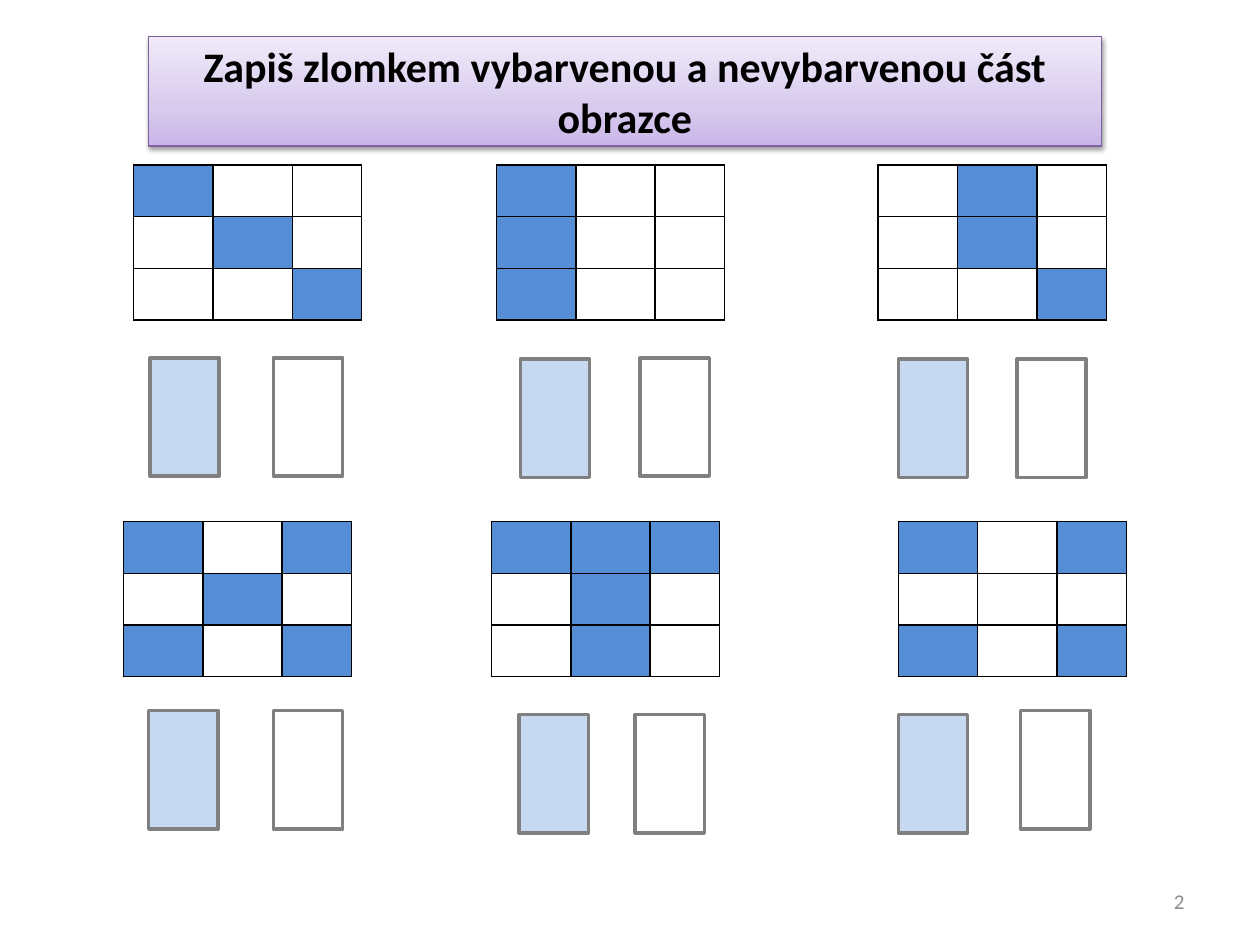
import pptx
import pptx.util
import pptx.dml.color
import pptx.oxml
import pptx.oxml.ns
from pptx.enum.shapes import MSO_SHAPE
from pptx.enum.text import MSO_ANCHOR, MSO_AUTO_SIZE, PP_ALIGN

Inches, Pt = pptx.util.Inches, pptx.util.Pt

# Content: "#" is a coloured square, "." an empty one
HEADING = "Zapiš zlomkem vybarvenou a nevybarvenou část obrazce"
PAGE_NUMBER = "2"
FRACTION_TASKS = [
    # pattern, grid position, coloured answer position, empty answer position
    (("#..", ".#.", "..#"), (1.06, 1.31), (1.19, 2.84), (2.17, 2.84)),
    (("#..", "#..", "#.."), (3.94, 1.31), (4.13, 2.85), (5.08, 2.84)),
    ((".#.", ".#.", "..#"), (6.97, 1.31), (7.13, 2.85), (8.07, 2.85)),
    (("#.#", ".#.", "#.#"), (0.98, 4.14), (1.18, 5.64), (2.17, 5.64)),
    (("###", ".#.", ".#."), (3.9, 4.14), (4.12, 5.67), (5.04, 5.67)),
    (("#.#", "...", "#.#"), (7.13, 4.14), (7.13, 5.67), (8.1, 5.64)),
]

COLUMN_WIDTHS = (0.63, 0.63, 0.55)
ROW_HEIGHT = 0.41
ANSWER_SIZE = (0.55, 0.94)
HEADING_STOPS = [(0, "C9B5E8"), (35, "D8CBEE"), (100, "F0EAF9")]
COLOURED, ANSWER_TINT, ANSWER_EDGE = "558ED5", "C6D9F1", "808080"


def rgb(colour):
    return pptx.dml.color.RGBColor.from_string(colour)


def xml(markup):
    """Parse an element whose opening tag ends in a NS marker."""
    return pptx.oxml.parse_xml(markup.replace("NS", pptx.oxml.ns.nsdecls("a"), 1))


def paint(target, colour):
    if colour:
        target.fill.solid()
        target.fill.fore_color.rgb = rgb(colour)
    else:
        target.fill.background()


def write(shape, text, size, colour, align, bold=False):
    frame = shape.text_frame
    frame.text = text
    frame.word_wrap = True
    frame.auto_size = MSO_AUTO_SIZE.NONE
    frame.vertical_anchor = MSO_ANCHOR.MIDDLE
    paragraph = frame.paragraphs[0]
    paragraph.alignment = align
    font = paragraph.runs[0].font
    font.name, font.size, font.bold = "Calibri", Pt(size), bold
    font.color.rgb = rgb(colour)


def add_heading(slide):
    heading = slide.shapes.title
    heading.left, heading.top = Inches(1.18), Inches(0.29)
    heading.width, heading.height = Inches(7.56), Inches(0.87)
    stops = "".join(f'<a:gs pos="{pos * 1000}"><a:srgbClr val="{colour}"/></a:gs>'
                    for pos, colour in HEADING_STOPS)
    properties = heading.element.spPr
    properties.append(xml('<a:prstGeom NS prst="roundRect"><a:avLst/></a:prstGeom>'))
    properties.append(xml(f'<a:gradFill NS rotWithShape="1"><a:gsLst>{stops}</a:gsLst>'
                          '<a:lin ang="16200000" scaled="1"/></a:gradFill>'))
    heading.line.color.rgb = rgb("7D60A0")
    heading.line.width = Pt(0.75)
    properties.append(xml(
        f'<a:effectLst NS><a:outerShdw blurRad="{Pt(3.1)}" dist="{Pt(1.6)}" dir="5400000"'
        ' rotWithShape="0"><a:srgbClr val="000000"><a:alpha val="38000"/></a:srgbClr>'
        '</a:outerShdw></a:effectLst>'))
    write(heading, HEADING, 24, "000000", PP_ALIGN.CENTER, bold=True)


def add_grid(slide, pattern, position):
    left, top = map(Inches, position)
    grid = slide.shapes.add_table(
        len(pattern), len(COLUMN_WIDTHS), left, top,
        Inches(sum(COLUMN_WIDTHS)), Inches(ROW_HEIGHT * len(pattern))).table
    grid.first_row = grid.horz_banding = False
    for column, width in zip(grid.columns, COLUMN_WIDTHS):
        column.width = Inches(width)
    for r, marks in enumerate(pattern):
        grid.rows[r].height = Inches(ROW_HEIGHT)
        for c, mark in enumerate(marks):
            cell = grid.cell(r, c)
            borders = cell._tc.get_or_add_tcPr()
            for side in "LRTB":
                borders.append(xml(
                    f'<a:ln{side} NS w="{Pt(1)}"><a:solidFill><a:srgbClr val="000000"/>'
                    f'</a:solidFill></a:ln{side}>'))
            paint(cell, COLOURED if mark == "#" else None)


def add_answer(slide, position, colour):
    answer = slide.shapes.add_shape(
        MSO_SHAPE.RECTANGLE, *map(Inches, position + ANSWER_SIZE))
    answer.shadow.inherit = False
    paint(answer, colour)
    answer.line.color.rgb = rgb(ANSWER_EDGE)
    answer.line.width = Pt(2)


def main():
    deck = pptx.Presentation()
    deck.slide_width, deck.slide_height = Inches(10), Inches(7.5)
    slide = deck.slides.add_slide(deck.slide_layouts[5])

    add_heading(slide)

    # Grids with their two answer boxes
    for pattern, grid_at, coloured_at, empty_at in FRACTION_TASKS:
        add_grid(slide, pattern, grid_at)
        add_answer(slide, coloured_at, ANSWER_TINT)
        add_answer(slide, empty_at, None)

    # Page number
    page = slide.shapes.add_textbox(*map(Inches, (7.17, 6.95, 2.33, 0.4)))
    write(page, PAGE_NUMBER, 12, "8C8C8C", PP_ALIGN.RIGHT)

    deck.save("out.pptx")


if __name__ == "__main__":
    main()
